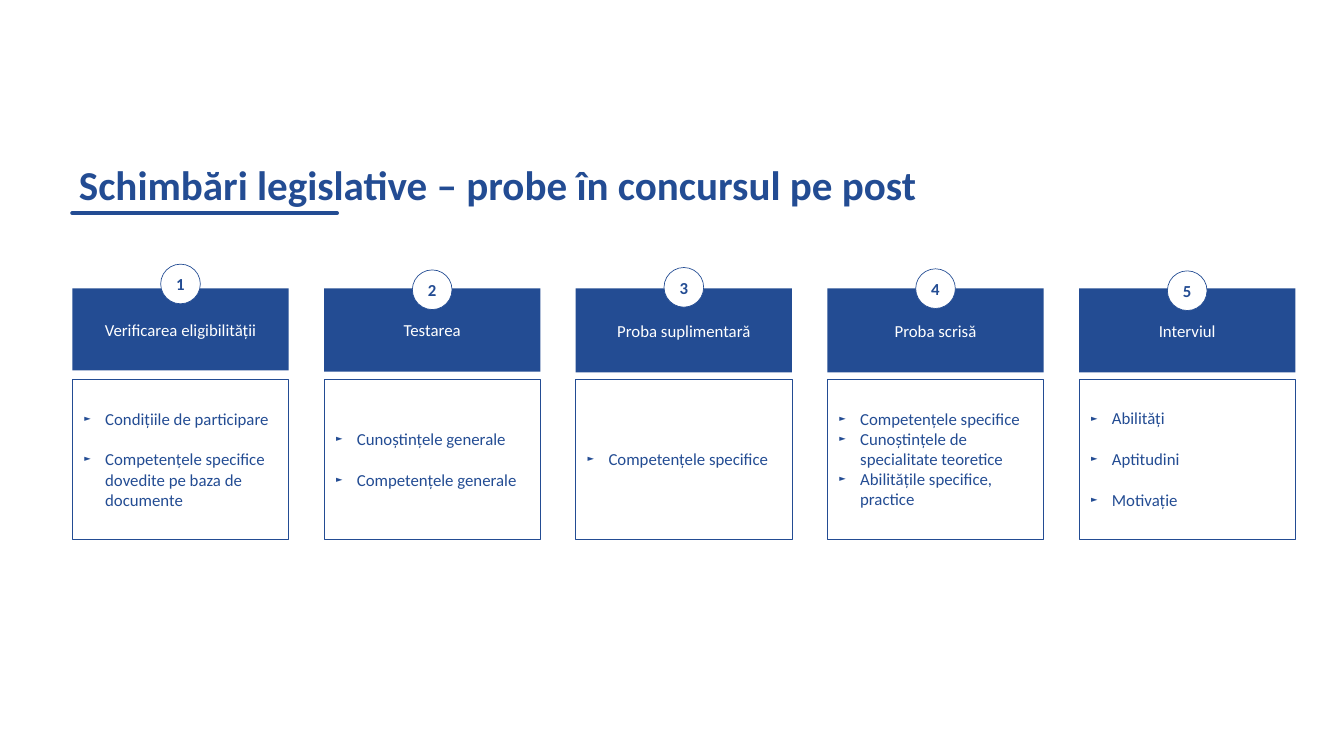
from typing import NamedTuple

from lxml.etree import SubElement
from pptx import Presentation
from pptx.dml.color import RGBColor
from pptx.enum.shapes import MSO_CONNECTOR, MSO_SHAPE
from pptx.enum.text import MSO_ANCHOR, PP_ALIGN
from pptx.oxml.ns import qn
from pptx.util import Pt

COLORS = {"blue": "234C93", "white": "FFFFFF"}
FONT = "Calibri"
LEFT, PITCH, WIDTH = 77.5, 269.65, 231.8
HEADER_TOP, BODY_TOP, BODY_HEIGHT = 309, 406, 171.5
BADGE_SIZE = 42.5
LINE_GAP = 22


class Stage(NamedTuple):
    title: str
    bullets: tuple[str, ...]
    gap: float
    header_height: float
    badge_top: float


STAGES = [
    Stage("Verificarea eligibilității",
          ("Condițiile de participare", "Competențele specifice dovedite pe baza de documente"),
          LINE_GAP, 88, 283),
    Stage("Testarea", ("Cunoștințele generale", "Competențele generale"),
          LINE_GAP, 89.2, 289.2),
    Stage("Proba suplimentară", ("Competențele specifice",), 0, 90, 286.6),
    Stage("Proba scrisă",
          ("Competențele specifice", "Cunoștințele de specialitate teoretice",
           "Abilitățile specifice, practice"),
          0, 90, 288),
    Stage("Interviul", ("Abilități", "Aptitudini", "Motivație"), LINE_GAP, 90, 290.2),
]


def rgb(name: str) -> RGBColor:
    return RGBColor.from_string(COLORS[name])


def add_run(p, text: str, color: str, size: float = 18, bold: bool = False) -> None:
    r = p.add_run()
    r.text = text
    r.font.name = FONT
    r.font.size = Pt(size)
    r.font.bold = bold
    r.font.color.rgb = rgb(color)


def add_box(s, kind, x: float, y: float, w: float, h: float,
            fill: str | None = None, line: str | None = None):
    sp = s.shapes.add_shape(kind, Pt(x), Pt(y), Pt(w), Pt(h))
    sp.shadow.inherit = False
    if fill:
        sp.fill.solid()
        sp.fill.fore_color.rgb = rgb(fill)
    else:
        sp.fill.background()
    if line:
        sp.line.color.rgb = rgb(line)
        sp.line.width = Pt(0.75)
    else:
        sp.line.fill.background()
    tf = sp.text_frame
    tf.word_wrap = True
    tf.vertical_anchor = MSO_ANCHOR.MIDDLE
    return tf


def set_bullet(p) -> None:
    p.level = 1
    pPr = p._p.get_or_add_pPr()
    pPr.set("marL", str(Pt(28.1)))
    pPr.set("indent", str(Pt(-22.3)))
    color = SubElement(pPr, qn("a:buClr"))
    SubElement(color, qn("a:srgbClr"), val=COLORS["blue"])
    SubElement(pPr, qn("a:buSzPct"), val="50000")
    SubElement(pPr, qn("a:buFont"), typeface=FONT)
    SubElement(pPr, qn("a:buChar"), char="►")


def add_title(s, text: str) -> None:
    tf = s.shapes.add_textbox(Pt(LEFT), Pt(173.5), Pt(1164), Pt(55.5)).text_frame
    tf.word_wrap = True
    p = tf.paragraphs[0]
    p.line_spacing = 0.9
    add_run(p, text, "blue", 44, True)
    rule = s.shapes.add_connector(MSO_CONNECTOR.STRAIGHT, Pt(LEFT), Pt(228.3),
                                  Pt(361), Pt(228.3))
    rule.line.color.rgb = rgb("blue")
    rule.line.width = Pt(4.5)
    spPr = rule._element.spPr
    spPr.find(qn("a:ln")).set("cap", "rnd")
    SubElement(spPr, qn("a:effectLst"))


def add_header(s, x: float, stage: Stage) -> None:
    tf = add_box(s, MSO_SHAPE.RECTANGLE, x, HEADER_TOP, WIDTH, stage.header_height, "blue")
    p = tf.paragraphs[0]
    p.alignment = PP_ALIGN.CENTER
    add_run(p, stage.title, "white")


def add_badge(s, x: float, number: int, stage: Stage) -> None:
    tf = add_box(s, MSO_SHAPE.OVAL, x + (WIDTH - BADGE_SIZE) / 2, stage.badge_top,
                 BADGE_SIZE, BADGE_SIZE, "white", "blue")
    tf.margin_left = tf.margin_right = tf.margin_top = tf.margin_bottom = 0
    p = tf.paragraphs[0]
    p.alignment = PP_ALIGN.CENTER
    add_run(p, str(number), "blue", bold=True)


def add_body(s, x: float, stage: Stage) -> None:
    tf = add_box(s, MSO_SHAPE.RECTANGLE, x, BODY_TOP, WIDTH, BODY_HEIGHT, line="blue")
    for i, text in enumerate(stage.bullets):
        p = tf.add_paragraph() if i else tf.paragraphs[0]
        p.alignment = PP_ALIGN.LEFT
        set_bullet(p)
        if i:
            p.space_before = Pt(stage.gap)
        add_run(p, text, "blue")


def main() -> None:
    prs = Presentation()
    prs.slide_width, prs.slide_height = Pt(1440), Pt(810)
    s = prs.slides.add_slide(prs.slide_layouts[6])
    add_title(s, "Schimbări legislative – probe în concursul pe post")
    for i, stage in enumerate(STAGES):
        x = LEFT + i * PITCH
        add_header(s, x, stage)
        add_badge(s, x, i + 1, stage)
        add_body(s, x, stage)
    prs.save("out.pptx")


if __name__ == "__main__":
    main()
